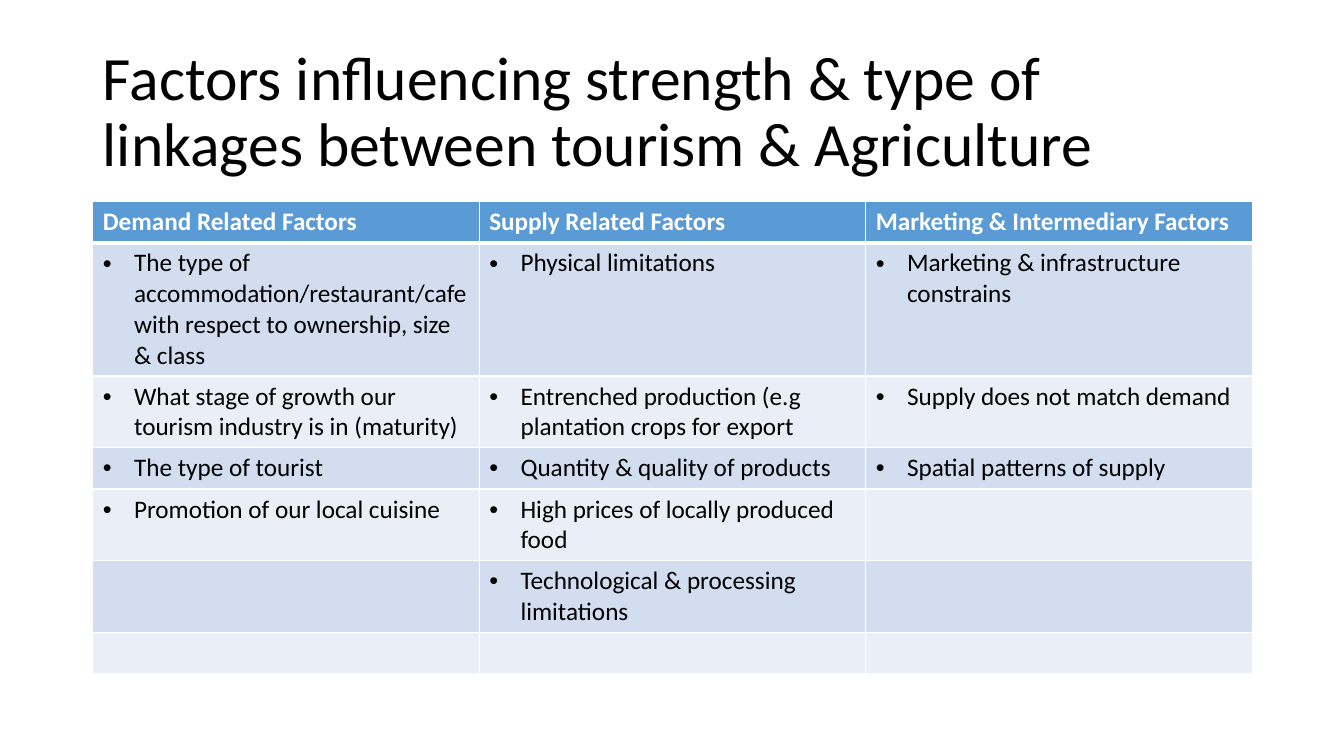
from lxml import etree
from pptx import Presentation
from pptx.dml.color import RGBColor
from pptx.enum import text
from pptx.oxml import ns
from pptx.util import Inches, Pt

BLACK = RGBColor(0x00, 0x00, 0x00)
WHITE = RGBColor(0xFF, 0xFF, 0xFF)
HEADER_BLUE = RGBColor(0x5B, 0x9B, 0xD5)
BAND_DARK = RGBColor(0xD2, 0xDE, 0xEF)
BAND_LIGHT = RGBColor(0xEA, 0xEF, 0xF7)

FONT = "Calibri"
LEFT, WIDTH = 0.92, 11.5
ROW_HEIGHT = 0.41
BULLET_INDENT = 0.31

TITLE = "Factors influencing strength & type of linkages between tourism & Agriculture"
HEADINGS = ["Demand Related Factors", "Supply Related Factors",
            "Marketing & Intermediary Factors"]
FACTORS = [
    ["The type of accommodation/restaurant/cafe with respect to ownership, size & class",
     "Physical limitations", "Marketing & infrastructure constrains"],
    ["What stage of growth our tourism industry is in (maturity)",
     "Entrenched production (e.g plantation crops for export",
     "Supply does not match demand"],
    ["The type of tourist", "Quantity & quality of products", "Spatial patterns of supply"],
    ["Promotion of our local cuisine", "High prices of locally produced food", ""],
    ["", "Technological & processing limitations", ""],
    ["", "", ""],
]


def write(frame, words, size=18, color=BLACK, bold=False, bullet=False, spacing=None):
    """Put one formatted paragraph into a text frame."""
    paragraph = frame.paragraphs[0]
    paragraph.alignment = text.PP_ALIGN.LEFT
    if spacing:
        paragraph.line_spacing = spacing
    if bullet:
        props = paragraph._p.get_or_add_pPr()
        props.set("marL", str(Inches(BULLET_INDENT)))
        props.set("indent", str(-Inches(BULLET_INDENT)))
        etree.SubElement(props, ns.qn("a:buFont"), typeface="Arial")
        etree.SubElement(props, ns.qn("a:buChar"), char="•")
    run = paragraph.add_run()
    run.text = words
    run.font.name = FONT
    run.font.size = Pt(size)
    run.font.bold = bold
    run.font.color.rgb = color


def set_borders(cell, bottom=1, top=1):
    """Draw white cell borders, widths in points."""
    props = cell._tc.get_or_add_tcPr()
    for side, width in (("L", 1), ("R", 1), ("T", top), ("B", bottom)):
        line = etree.SubElement(props, ns.qn(f"a:ln{side}"), w=str(Pt(width)))
        fill = etree.SubElement(line, ns.qn("a:solidFill"))
        etree.SubElement(fill, ns.qn("a:srgbClr"), val=str(WHITE))


def add_title(slide, left, top, width, height):
    title = slide.shapes.title
    title.left, title.top = Inches(left), Inches(top)
    title.width, title.height = Inches(width), Inches(height)
    frame = title.text_frame
    frame.word_wrap = True
    frame.auto_size = text.MSO_AUTO_SIZE.NONE
    frame.vertical_anchor = text.MSO_ANCHOR.MIDDLE
    write(frame, TITLE, size=44, spacing=0.9)


def add_factor_table(slide, left, top, width):
    rows = [HEADINGS] + FACTORS
    table = slide.shapes.add_table(
        len(rows), len(HEADINGS), Inches(left), Inches(top),
        Inches(width), Inches(ROW_HEIGHT * len(rows))).table
    table.horz_banding = False
    for row_index, row in enumerate(rows):
        is_header = row_index == 0
        band = BAND_DARK if row_index % 2 else BAND_LIGHT
        for column, words in enumerate(row):
            cell = table.cell(row_index, column)
            set_borders(cell, bottom=3 if is_header else 1,
                        top=3 if row_index == 1 else 1)
            cell.fill.solid()
            cell.fill.fore_color.rgb = HEADER_BLUE if is_header else band
            if words:
                write(cell.text_frame, words, color=WHITE if is_header else BLACK,
                      bold=is_header, bullet=not is_header)


def main():
    deck = Presentation()
    deck.slide_width, deck.slide_height = Inches(13.33), Inches(7.5)
    slide = deck.slides.add_slide(deck.slide_layouts[5])  # title only
    add_title(slide, LEFT, 0.4, WIDTH, 1.45)
    add_factor_table(slide, LEFT, 2, WIDTH)
    deck.save("out.pptx")


if __name__ == "__main__":
    main()
